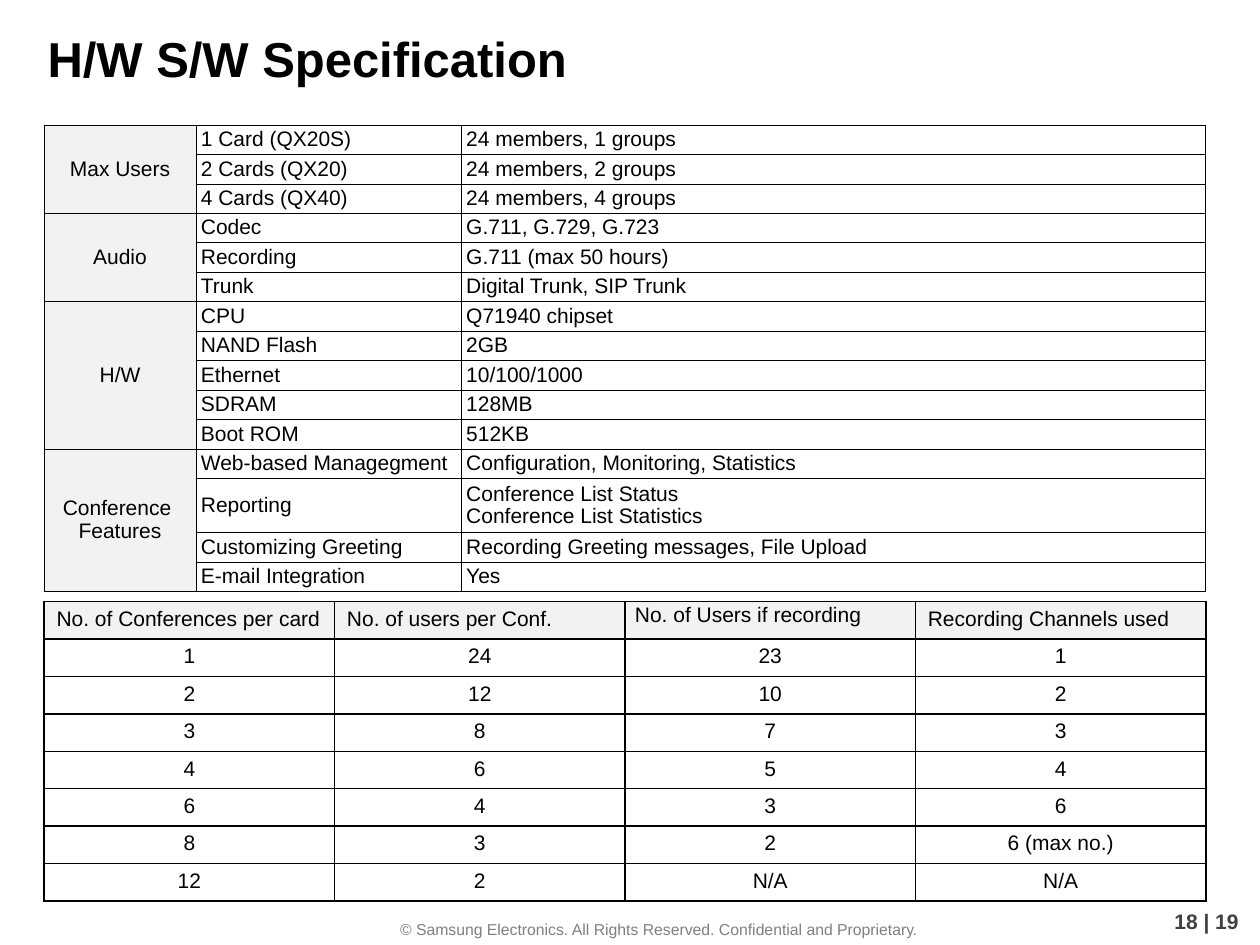
from dataclasses import dataclass

from lxml.etree import SubElement
from pptx import Presentation
from pptx.dml.color import RGBColor as Rgb
from pptx.enum.text import MSO_ANCHOR as Anchor, PP_ALIGN as Align
from pptx.oxml.ns import qn
from pptx.util import Cm, Pt


@dataclass(frozen=True)
class Theme:
    font: str = "Arial"
    ink: str = "000000"
    gray: str = "808080"
    dark: str = "404040"
    shade: str = "F2F2F2"
    head: int = 28
    body: int = 12
    small: int = 9
    pitch: float = 0.97


THEME = Theme()
TIGHT = (0.1, 0.05)
WIDE = (0.25, 0.13)

GROUPS = [
    ("Max Users", [
        ("1 Card (QX20S)", "24 members, 1 groups"),
        ("2 Cards (QX20)", "24 members, 2 groups"),
        ("4 Cards (QX40)", "24 members, 4 groups"),
    ]),
    ("Audio", [
        ("Codec", "G.711, G.729, G.723"),
        ("Recording", "G.711 (max 50 hours)"),
        ("Trunk", "Digital Trunk, SIP Trunk"),
    ]),
    ("H/W", [
        ("CPU", "Q71940 chipset"),
        ("NAND Flash", "2GB"),
        ("Ethernet", "10/100/1000"),
        ("SDRAM", "128MB"),
        ("Boot ROM", "512KB"),
    ]),
    ("Conference \nFeatures", [
        ("Web-based Managegment", "Configuration, Monitoring, Statistics"),
        ("Reporting", "Conference List Status\vConference List Statistics"),
        ("Customizing Greeting", "Recording Greeting messages, File Upload"),
        ("E-mail Integration", "Yes"),
    ]),
]

LIMITS = [
    ("No. of Conferences per card", "No. of users per Conf.",
     "No. of Users if recording", "Recording Channels used"),
    ("1", "24", "23", "1"),
    ("2", "12", "10", "2"),
    ("3", "8", "7", "3"),
    ("4", "6", "5", "4"),
    ("6", "4", "3", "6"),
    ("8", "3", "2", "6 (max no.)"),
    ("12", "2", "N/A", "N/A"),
]


def write(frame, text, size, color=THEME.ink, bold=False, align=Align.LEFT,
          pitch=None):
    for i, line in enumerate(text.split("\n")):
        para = frame.add_paragraph() if i else frame.paragraphs[0]
        para.alignment = align
        para.line_spacing = pitch
        for j, part in enumerate(line.split("\v")):
            if j:
                para.add_line_break()
            run = para.add_run()
            run.text = part
            font = run.font
            font.name, font.size, font.bold = THEME.font, Pt(size), bold
            font.color.rgb = Rgb.from_string(color)


def add_label(slide, box, text, size, anchor=Anchor.TOP, **look):
    frame = slide.shapes.add_textbox(*map(Cm, box)).text_frame
    frame.word_wrap = True
    frame.vertical_anchor = anchor
    write(frame, text, size, **look)


def add_edges(cell, width):
    props = cell._tc.get_or_add_tcPr()
    for side in ("lnL", "lnR", "lnT", "lnB"):
        line = SubElement(props, qn(f"a:{side}"), w=str(Pt(width)))
        fill = SubElement(line, qn("a:solidFill"))
        SubElement(fill, qn("a:srgbClr"), val=THEME.ink)


def style_cell(cell, width, inset, anchor, shaded):
    cell.margin_left = cell.margin_right = Cm(inset[0])
    cell.margin_top = cell.margin_bottom = Cm(inset[1])
    cell.vertical_anchor = anchor
    add_edges(cell, width)
    if shaded:
        cell.fill.solid()
        cell.fill.fore_color.rgb = Rgb.from_string(THEME.shade)
    else:
        cell.fill.background()


def fill_cell(cell, text, align=Align.LEFT):
    write(cell.text_frame, text, THEME.body, align=align, pitch=THEME.pitch)


def add_grid(slide, box, cols, rows):
    shape = slide.shapes.add_table(len(rows), len(cols), *map(Cm, box))
    grid = shape.table
    grid.first_row = grid.horz_banding = False
    for col, width in zip(grid.columns, cols):
        col.width = Cm(width)
    for row, height in zip(grid.rows, rows):
        row.height = Cm(height)
    return grid


def add_specs(slide, box):
    pairs = [pair for _, items in GROUPS for pair in items]
    lines = [value.count("\v") + 1 for _, value in pairs]
    rows = [box[3] * n / sum(lines) for n in lines]
    cols = [3.06, 5.35]
    grid = add_grid(slide, box, cols + [box[2] - sum(cols)], rows)
    for r, pair in enumerate(pairs):
        for c in range(3):
            cell = grid.cell(r, c)
            style_cell(cell, 0.5, TIGHT, Anchor.MIDDLE, c == 0)
            if c:
                fill_cell(cell, pair[c - 1])
    top = 0
    for name, items in GROUPS:
        end = top + len(items)
        fill_cell(grid.cell(top, 0), name, Align.CENTER)
        for r in range(top + 1, end):
            para = grid.cell(r, 0).text_frame.paragraphs[0]
            SubElement(para._p, qn("a:endParaRPr"), sz=str(THEME.body * 100))
        grid.cell(top, 0).merge(grid.cell(end - 1, 0))
        top = end


def add_limits(slide, box):
    count = len(LIMITS[0])
    rows = [box[3] / len(LIMITS)] * len(LIMITS)
    grid = add_grid(slide, box, [box[2] / count] * count, rows)
    for r, row in enumerate(LIMITS):
        for c, text in enumerate(row):
            cell = grid.cell(r, c)
            inset = (0.2, 0.05) if (r, c) == (0, 2) else WIDE
            style_cell(cell, 1, inset, Anchor.TOP, r == 0)
            fill_cell(cell, text, Align.CENTER if r else Align.LEFT)


def add_footer(slide, box):
    left, top, width, height = box
    add_label(slide, (left + 6.93, top + 0.23, 12.7, 0.64),
              "© Samsung Electronics. All Rights Reserved. "
              "Confidential and Proprietary.",
              THEME.small, color=THEME.gray, align=Align.CENTER)
    add_label(slide, (left + width - 6.1, top, 5.92, height), "18 | 19",
              THEME.body, Anchor.MIDDLE, color=THEME.dark, bold=True,
              align=Align.RIGHT)


def main():
    deck = Presentation()
    deck.slide_width, deck.slide_height = Cm(25.4), Cm(19.05)
    slide = deck.slides.add_slide(deck.slide_layouts[6])
    add_label(slide, (0.71, 0.2, 24.69, 1.93), "H/W S/W Specification",
              THEME.head, Anchor.MIDDLE, bold=True)
    add_specs(slide, (0.89, 2.52, 23.42, 7.7))
    add_limits(slide, (0.89, 12.13, 23.42, 5.1))
    add_footer(slide, (0, 18.19, 25.4, 0.74))
    deck.save("out.pptx")


if __name__ == "__main__":
    main()
